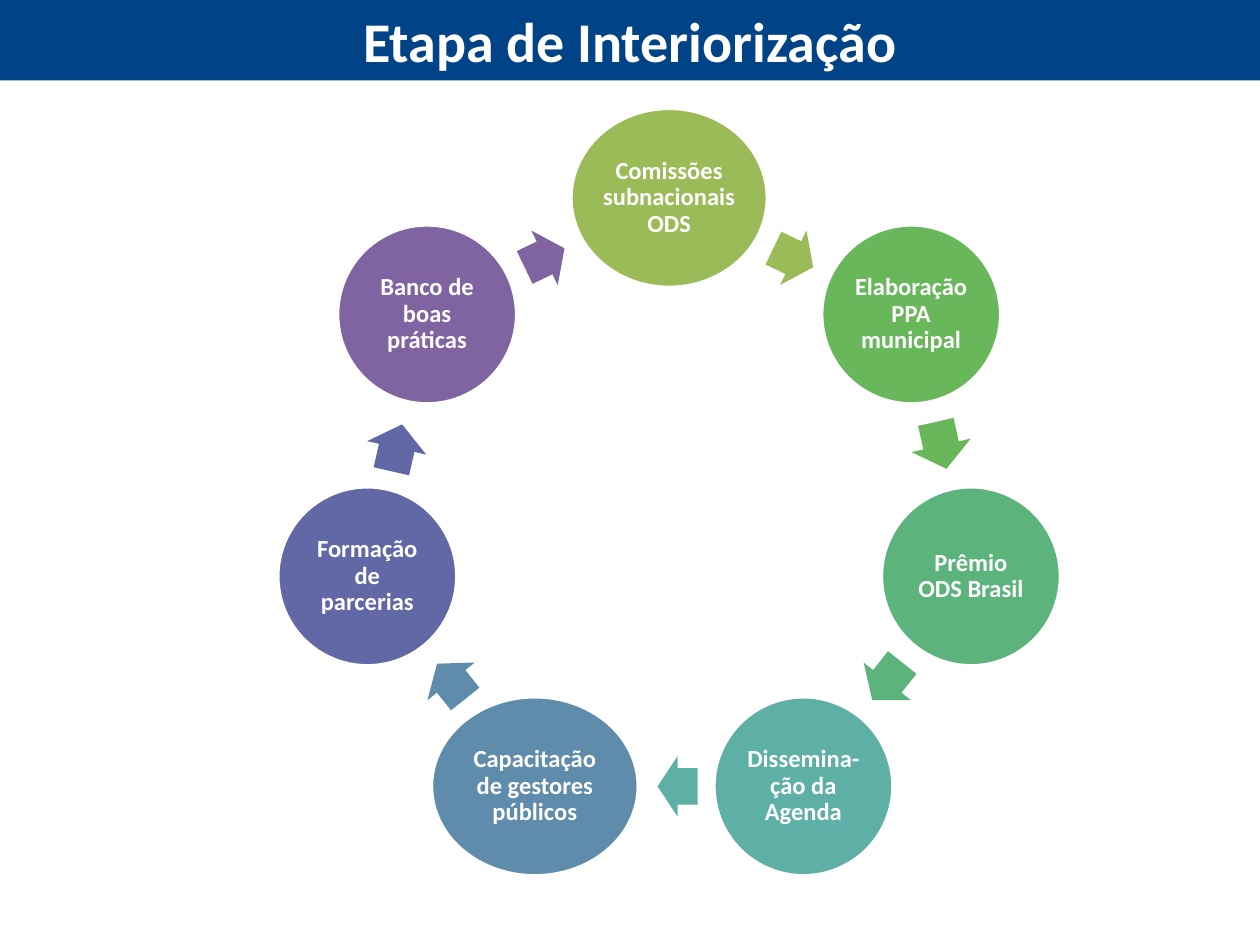
from math import cos, pi, sin

from pptx import Presentation
from pptx.dml.color import RGBColor
from pptx.enum.shapes import MSO_SHAPE
from pptx.enum.text import MSO_ANCHOR, PP_ALIGN
from pptx.util import Cm, Pt

FONT = "Calibri"
WHITE = RGBColor(0xFF, 0xFF, 0xFF)
NAVY = RGBColor(0x00, 0x43, 0x86)
OLIVE = RGBColor(0x9B, 0xBB, 0x59)
GREEN = RGBColor(0x69, 0xB7, 0x5B)
EMERALD = RGBColor(0x5C, 0xB3, 0x7C)
TEAL = RGBColor(0x5E, 0xAF, 0xA6)
STEEL = RGBColor(0x60, 0x8C, 0xAB)
INDIGO = RGBColor(0x62, 0x67, 0xA6)
PURPLE = RGBColor(0x80, 0x64, 0xA2)

CENTER_X, CENTER_Y, RADIUS = 13.49, 10.23, 6.24
NODE_SIZE = 3.61
ARROW_HEIGHT = 1.22

STAGES = [
    ("Comissões subnacionais ODS", OLIVE, 3.96, 0.89, 0.07),
    ("Elaboração PPA municipal", GREEN, NODE_SIZE, 0.97, 0),
    ("Prêmio ODS Brasil", EMERALD, NODE_SIZE, 0.97, 0),
    ("Dissemina-ção da Agenda", TEAL, NODE_SIZE, 0.81, -0.17),
    ("Capacitação de gestores públicos", STEEL, 4.17, 0.91, 0),
    ("Formação de parcerias", INDIGO, NODE_SIZE, 0.97, -0.05),
    ("Banco de boas práticas", PURPLE, NODE_SIZE, 0.89, -0.08),
]


class CycleSlide:
    """Hold the shared style and the slide on which the cycle is drawn."""

    def __init__(self, slide):
        self.slide = slide

    def label(self, shape, text, size, inset, spacing):
        frame = shape.text_frame
        frame.text = text
        frame.word_wrap = True
        frame.vertical_anchor = MSO_ANCHOR.MIDDLE
        frame.margin_left = frame.margin_right = Cm(inset)
        frame.margin_top = frame.margin_bottom = Cm(inset)
        paragraph = frame.paragraphs[0]
        paragraph.alignment = PP_ALIGN.CENTER
        paragraph.line_spacing = spacing
        font = paragraph.runs[0].font
        font.name, font.size, font.bold = FONT, Pt(size), True
        font.color.rgb = WHITE

    def title(self, text):
        banner = self.slide.shapes.title
        banner.left, banner.top = Cm(0), Cm(0)
        banner.width, banner.height = Cm(25.4), Cm(1.62)
        banner.fill.solid()
        banner.fill.fore_color.rgb = NAVY
        self.label(banner, text, 32, 0.13, 1.0)

    def centered(self, kind, x, y, width, height, color):
        shape = self.slide.shapes.add_shape(
            kind, Cm(x - width / 2), Cm(y - height / 2), Cm(width), Cm(height))
        shape.shadow.inherit = False
        shape.fill.solid()
        shape.fill.fore_color.rgb = color
        return shape

    def node(self, x, y, width, color, text):
        ellipse = self.centered(MSO_SHAPE.OVAL, x, y, width, NODE_SIZE, color)
        ellipse.line.color.rgb = WHITE
        ellipse.line.width = Pt(2)
        self.label(ellipse, text, 14, 0.05, 0.9)

    def arrow(self, x, y, length, color, rotation):
        arrow = self.centered(
            MSO_SHAPE.RIGHT_ARROW, x, y, length, ARROW_HEIGHT, color)
        arrow.line.fill.background()
        arrow.adjustments[0] = 0.6
        arrow.adjustments[1] = 0.5
        arrow.rotation = rotation


def main():
    deck = Presentation()
    deck.slide_width, deck.slide_height = Cm(25.4), Cm(19.05)
    cycle = CycleSlide(deck.slides.add_slide(deck.slide_layouts[5]))
    cycle.title("Etapa de Interiorização")

    step = 2 * pi / len(STAGES)
    arrow_radius = RADIUS * cos(step / 2)
    for index, (stage, color, width, arrow_length, shift) in enumerate(STAGES):
        angle = index * step
        cycle.node(CENTER_X + RADIUS * sin(angle),
                   CENTER_Y - RADIUS * cos(angle), width, color, stage)
        heading = angle + step / 2
        cycle.arrow(
            CENTER_X + arrow_radius * sin(heading) + shift * cos(heading),
            CENTER_Y - arrow_radius * cos(heading) + shift * sin(heading),
            arrow_length, color, heading * 180 / pi)

    deck.save("out.pptx")


if __name__ == "__main__":
    main()
